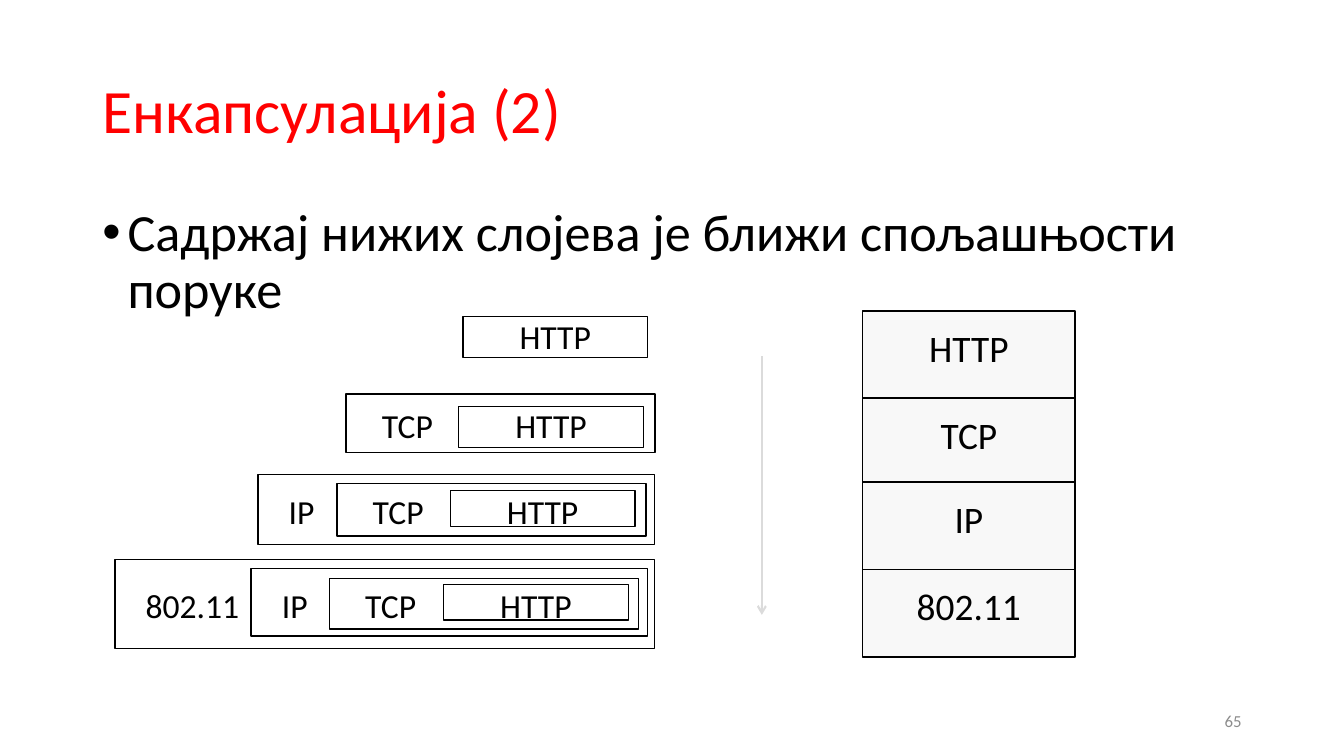
"""Build the encapsulation slide: nested protocol frames beside the layer stack."""
from lxml import etree
from pptx import Presentation
from pptx.dml.color import RGBColor
from pptx.enum.shapes import MSO_CONNECTOR, MSO_SHAPE
from pptx.enum.text import MSO_ANCHOR, PP_ALIGN
from pptx.oxml.ns import qn
from pptx.util import Inches, Pt

LEFT, CENTER, RIGHT = PP_ALIGN.LEFT, PP_ALIGN.CENTER, PP_ALIGN.RIGHT
TOP, MIDDLE = MSO_ANCHOR.TOP, MSO_ANCHOR.MIDDLE
RECTANGLE, STRAIGHT = MSO_SHAPE.RECTANGLE, MSO_CONNECTOR.STRAIGHT
COLUMNS, ROWS = 160, 90
COLORS = {"title": "FF0000", "ink": "000000", "layer": "F8F8F8",
          "arrow": "DBDBDB", "number": "8C8C8C"}

FRAME_WIDTHS = {"HTTP": 22, "TCP": 36.8, "IP": 47.2, "802.11": 64.2}
LABEL_CENTERS = {"HTTP": 11, "TCP": 7.3, "IP": 5.2, "802.11": 9.2}
LABEL_WIDTH, LABEL_HEIGHT = 17.2, 6
MESSAGES = [
    (37, [("HTTP", 55.1, 37.7, 4.9)]),
    (47.6, [("TCP", 41.2, 46.9, 7), ("HTTP", 54.6, 48.4, 4.9)]),
    (57.8, [("IP", 30.7, 56.5, 8.3), ("TCP", 40.1, 57.6, 6.2),
            ("HTTP", 53.6, 58.4, 4.3)]),
    (69, [("802.11", 13.7, 66.6, 10.6), ("IP", 29.9, 67.7, 8),
          ("TCP", 39.2, 68.9, 6), ("HTTP", 52.8, 69.6, 4.2)]),
]
LAYERS = [("HTTP", 37), ("TCP", 47.4), ("IP", 57.4), ("802.11", 67.8)]


def color(name):
    return RGBColor.from_string(COLORS[name])


def write(frame, text, size, ink="ink", align=LEFT, anchor=TOP, spacing=1.0):
    frame.word_wrap = True
    frame.vertical_anchor = anchor
    paragraph = frame.paragraphs[0]
    paragraph.alignment = align
    paragraph.line_spacing = spacing
    run = paragraph.add_run()
    run.text = text
    run.font.name = "Calibri"
    run.font.size = Pt(size)
    run.font.color.rgb = color(ink)
    return paragraph


class GridSlide:
    def __init__(self, deck):
        self.column = deck.slide_width / COLUMNS
        self.row = deck.slide_height / ROWS
        self.slide = deck.slides.add_slide(deck.slide_layouts[5])
        self.shapes = self.slide.shapes

    def place(self, left, top, width, height):
        return (round(left * self.column), round(top * self.row),
                round(width * self.column), round(height * self.row))

    def title(self, text, *cell, **style):
        heading = self.shapes.title
        heading.left, heading.top, heading.width, heading.height = self.place(*cell)
        write(heading.text_frame, text, **style)

    def text(self, text, *cell, **style):
        box = self.shapes.add_textbox(*self.place(*cell))
        return write(box.text_frame, text, **style)

    def bullet(self, text, *cell, **style):
        paragraph = self.text(text, *cell, **style)
        paragraph.space_before = Pt(10)
        properties = paragraph._p.get_or_add_pPr()
        properties.set("marL", str(Inches(0.25)))
        properties.set("indent", str(-Inches(0.25)))
        etree.SubElement(properties, qn("a:buFont"), typeface="Arial")
        etree.SubElement(properties, qn("a:buChar"), char="•")

    def box(self, *cell, fill=None):
        outline = self.shapes.add_shape(RECTANGLE, *self.place(*cell))
        outline.shadow.inherit = False
        outline.line.color.rgb = color("ink")
        outline.line.width = Pt(1)
        if fill:
            outline.fill.solid()
            outline.fill.fore_color.rgb = color(fill)
        else:
            outline.fill.background()
        return outline

    def layer(self, protocol, *cell):
        frame = self.box(*cell, fill="layer").text_frame
        frame.margin_top = round(1.65 * self.row)
        write(frame, protocol, size=26.7, align=CENTER)

    def frame(self, protocol, left, top, height, label_top):
        self.box(left, top, FRAME_WIDTHS[protocol], height)
        label_left = left + LABEL_CENTERS[protocol] - LABEL_WIDTH / 2
        self.text(protocol, label_left, label_top, LABEL_WIDTH, LABEL_HEIGHT,
                  size=24, align=CENTER)

    def down_arrow(self, column, start, end):
        x, y, _, length = self.place(column, start, 0, end - start)
        arrow = self.shapes.add_connector(STRAIGHT, x, y, x, y + length)
        arrow.line.color.rgb = color("arrow")
        arrow.line.width = Pt(1.5)
        etree.SubElement(arrow.line._get_or_add_ln(), qn("a:tailEnd"), type="arrow")
        etree.SubElement(arrow._element.spPr, qn("a:effectLst"))


def main():
    deck = Presentation()
    deck.slide_width, deck.slide_height = Inches(13.333), Inches(7.5)
    page = GridSlide(deck)
    page.title("Енкапсулација (2)", 11, 4.8, 138, 17.4,
               size=44, ink="title", anchor=MIDDLE, spacing=0.9)
    page.bullet("Садржај нижих слојева је ближи спољашњости поруке",
                11, 24, 138, 57.1, size=37.3, spacing=0.9)
    page.text("65", 113, 83.4, 36, 4.8,
              size=12, ink="number", align=RIGHT, anchor=MIDDLE)
    for protocol, top in LAYERS:
        page.layer(protocol, 102.7, top, 25.3, 10.4)
    page.down_arrow(90.7, 42.4, 73.2)
    for label_top, frames in MESSAGES:
        for protocol, left, top, height in frames:
            page.frame(protocol, left, top, height, label_top)
    deck.save("out.pptx")


if __name__ == "__main__":
    main()
